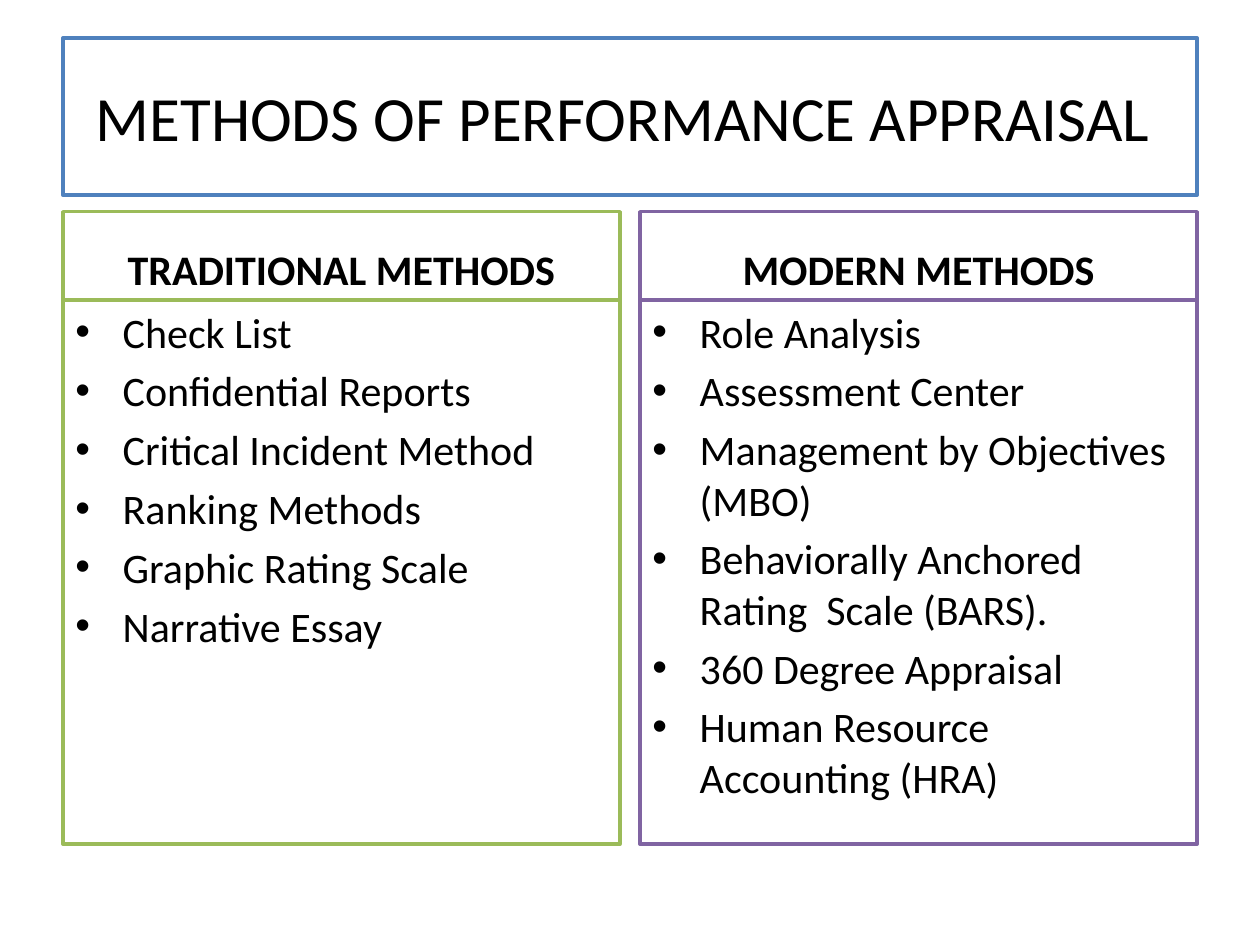
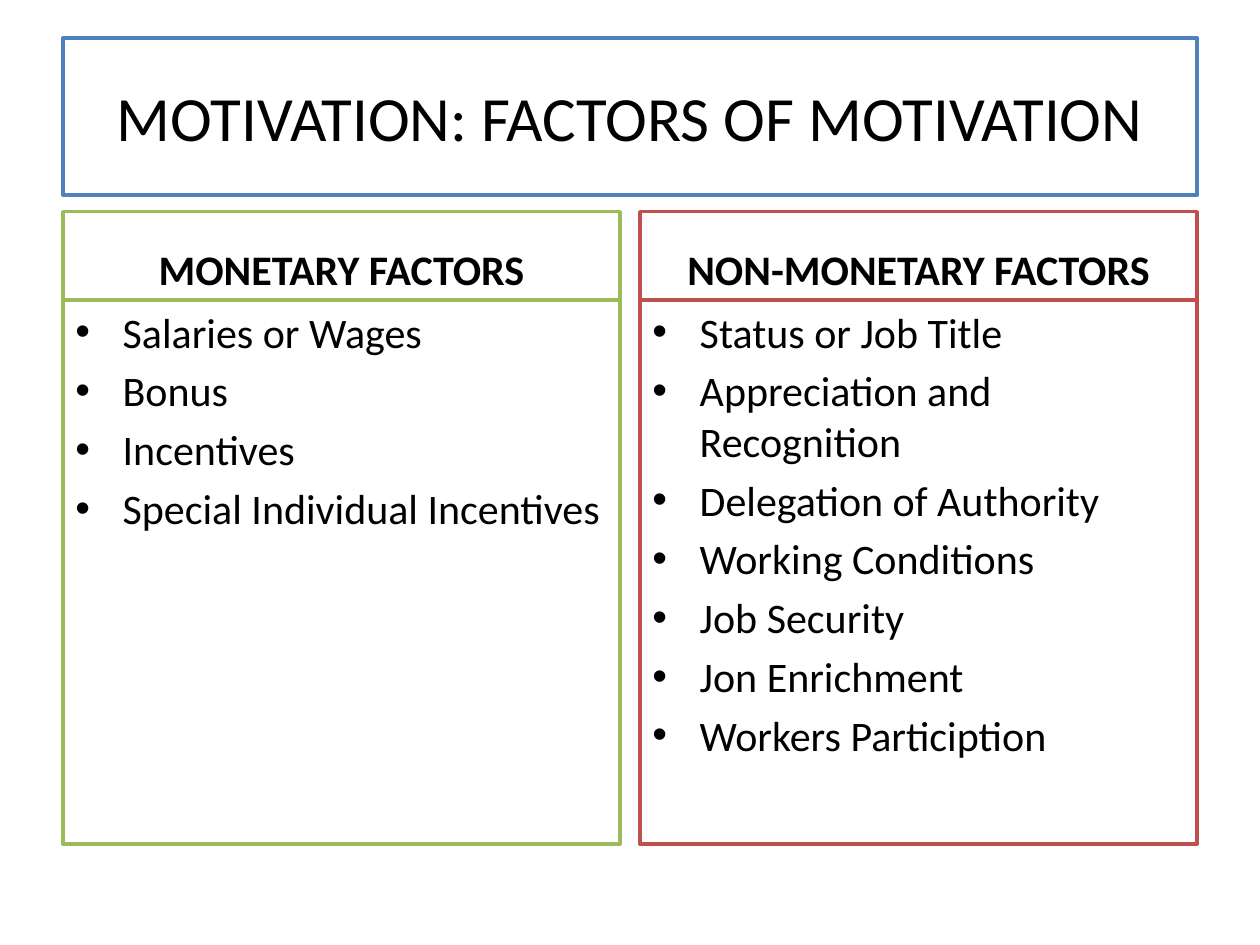
from pptx import Presentation
from pptx.dml.color import RGBColor
from pptx.enum import shapes, text
from pptx.oxml import ns
from pptx.util import Pt
from lxml import etree

BLACK = RGBColor(0x00, 0x00, 0x00)
WHITE = RGBColor(0xFF, 0xFF, 0xFF)
BLUE = RGBColor(0x4F, 0x81, 0xBD)
GREEN = RGBColor(0x9B, 0xBB, 0x59)
PURPLE = RGBColor(0x80, 0x64, 0xA2)
RED = RGBColor(0xC0, 0x50, 0x4D)

MARGIN = 36
CONTENT_WIDTH = 648
TITLE_BOX = (MARGIN, 21.6, CONTENT_WIDTH, 90)
COLUMNS_TOP, COLUMNS_HEIGHT = 121, 361.4
COLUMN_GAP = 11.5
HEADING_HEIGHT = 50.4
BULLET_INDENT = 27
ITEM_SPACING = 4.8

TITLE_FONT = {"name": "Calibri", "size": Pt(36), "bold": False}
HEADING_FONT = {"name": "Calibri", "size": Pt(24), "bold": True}
ITEM_FONT = {"name": "Calibri", "size": Pt(24), "bold": False}

SLIDES = [
    ("METHODS OF PERFORMANCE APPRAISAL ", [
        ("TRADITIONAL METHODS", GREEN, [
            "Check List", "Confidential Reports", "Critical Incident Method",
            "Ranking Methods", "Graphic Rating Scale", "Narrative Essay"]),
        ("MODERN METHODS", PURPLE, [
            "Role Analysis", "Assessment Center",
            "Management by Objectives (MBO)",
            "Behaviorally Anchored Rating  Scale (BARS).",
            "360 Degree Appraisal", "Human Resource Accounting (HRA)"]),
    ]),
    ("MOTIVATION: FACTORS OF MOTIVATION", [
        ("MONETARY FACTORS", GREEN, [
            "Salaries or Wages", "Bonus", "Incentives",
            "Special Individual Incentives"]),
        ("NON-MONETARY FACTORS", RED, [
            "Status or Job Title", "Appreciation and Recognition",
            "Delegation of Authority", "Working Conditions", "Job Security",
            "Jon Enrichment", "Workers Particiption"]),
    ]),
]


def set_format(target, values):
    """Set each named value on the target."""
    for name, value in values.items():
        setattr(target, name, value)


def add_bullet(paragraph):
    """Give a paragraph a round bullet with a hanging indent."""
    properties = paragraph._p.get_or_add_pPr()
    indent = Pt(BULLET_INDENT)
    properties.set("marL", str(indent))
    properties.set("indent", str(-indent))
    etree.SubElement(properties, ns.qn("a:buFont")).set("typeface", "Arial")
    etree.SubElement(properties, ns.qn("a:buChar")).set("char", "•")


def add_panel(slide, box, border, lines, font, anchor,
              align=text.PP_ALIGN.CENTER, bulleted=False):
    """Draw an outlined white panel holding one paragraph per line."""
    panel = slide.shapes.add_shape(
        shapes.MSO_SHAPE.RECTANGLE, *(Pt(length) for length in box))
    panel.shadow.inherit = False
    panel.fill.solid()
    panel.fill.fore_color.rgb = WHITE
    panel.line.color.rgb = border
    panel.line.width = Pt(2)
    frame = panel.text_frame
    set_format(frame, {"word_wrap": True, "vertical_anchor": anchor})
    for index, line in enumerate(lines):
        paragraph = frame.add_paragraph() if index else frame.paragraphs[0]
        if index:
            paragraph.space_before = Pt(ITEM_SPACING)
        paragraph.alignment = align
        if bulleted:
            add_bullet(paragraph)
        run = paragraph.add_run()
        run.text = line
        set_format(run.font, font)
        run.font.color.rgb = BLACK


def add_column(slide, box, heading, border, items):
    """Stack a heading panel on a bulleted list panel within the box."""
    left, top, width, height = box
    add_panel(slide, (left, top, width, HEADING_HEIGHT), border, [heading],
              HEADING_FONT, text.MSO_ANCHOR.BOTTOM)
    add_panel(slide,
              (left, top + HEADING_HEIGHT, width, height - HEADING_HEIGHT),
              border, items, ITEM_FONT, text.MSO_ANCHOR.TOP,
              text.PP_ALIGN.LEFT, bulleted=True)


def add_comparison(deck, title, columns):
    """Add a slide with a title panel above equal columns."""
    slide = deck.slides.add_slide(deck.slide_layouts[6])
    add_panel(slide, TITLE_BOX, BLUE, [title], TITLE_FONT,
              text.MSO_ANCHOR.MIDDLE)
    count = len(columns)
    width = (CONTENT_WIDTH - COLUMN_GAP * (count - 1)) / count
    for index, column in enumerate(columns):
        left = MARGIN + index * (width + COLUMN_GAP)
        add_column(slide, (left, COLUMNS_TOP, width, COLUMNS_HEIGHT), *column)


def main():
    """Build and save the deck."""
    deck = Presentation()
    set_format(deck, {"slide_width": Pt(720), "slide_height": Pt(540)})
    for title, columns in SLIDES:
        add_comparison(deck, title, columns)
    deck.save("out.pptx")


if __name__ == "__main__":
    main()
